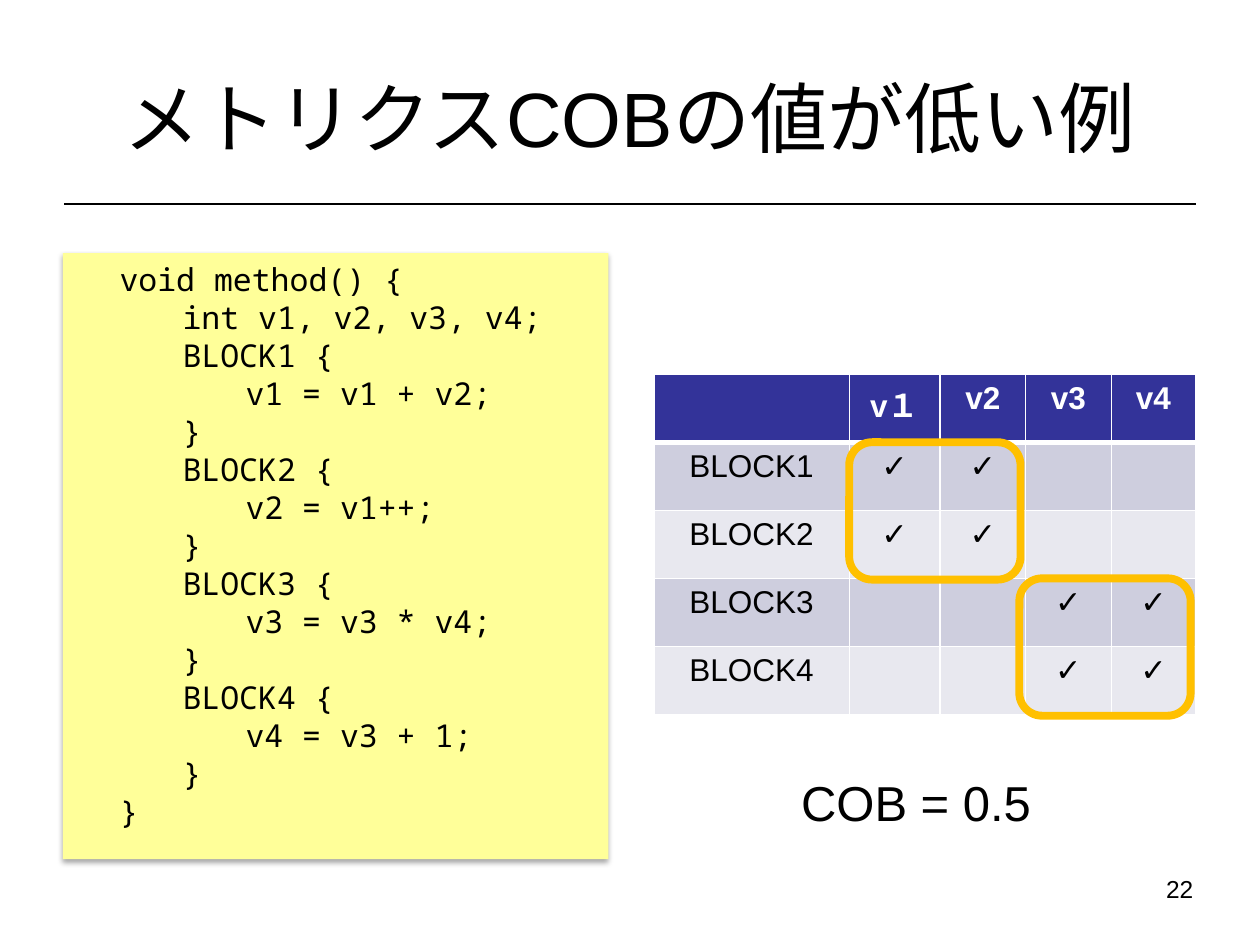
from lxml.etree import SubElement as Sub
from pptx import Presentation
from pptx.dml.color import RGBColor as RGB
from pptx.enum.shapes import MSO_CONNECTOR as Conn, MSO_SHAPE as Geo
from pptx.enum.text import MSO_ANCHOR as Anchor, PP_ALIGN as Align
from pptx.oxml.ns import qn
from pptx.util import Inches, Pt

COLORS = {"ink": "000000", "white": "FFFFFF", "note": "FFFF99", "head": "333399",
          "odd": "CECEDE", "even": "E8E8EF", "mark": "FFC000"}
TITLE = "メトリクスCOBの値が低い例"
# (indent level, line)
CODE = [
    (0, "void method() {"),
    (1, "int v1, v2, v3, v4;"),
    (1, "BLOCK1 {"), (2, "v1 = v1 + v2;"), (1, "}"),
    (1, "BLOCK2 {"), (2, "v2 = v1++;"), (1, "}"),
    (1, "BLOCK3 {"), (2, "v3 = v3 * v4;"), (1, "}"),
    (1, "BLOCK4 {"), (2, "v4 = v3 + 1;"), (1, "}"),
    (0, "}"),
]
USES = [
    ["", "v１", "v2", "v3", "v4"],
    ["BLOCK1", "✓", "✓", "", ""],
    ["BLOCK2", "✓", "✓", "", ""],
    ["BLOCK3", "", "", "✓", "✓"],
    ["BLOCK4", "", "", "✓", "✓"],
]
WIDTHS = [1.55, 0.72, 0.68, 0.68, 0.67]
ROW = 0.54
MARKS = [(6.74, 3.51), (8.09, 4.59)]
BODY = {"name": "Arial", "size": Pt(18), "bold": False}
MONO = {**BODY, "name": "Noto Sans Mono"}


def rgb(key):
    return RGB.from_string(COLORS[key])


def box(at):
    return [Inches(n) for n in at]


def style(para, form, color="ink", align=Align.LEFT):
    para.alignment = align
    for key, val in form.items():
        setattr(para.font, key, val)
    para.font.color.rgb = rgb(color)


def label(at, text, size, align=Align.LEFT, wrap=True):
    frame = slide.shapes.add_textbox(*box(at)).text_frame
    frame.word_wrap = wrap
    frame.text = text
    style(frame.paragraphs[0], {**BODY, "size": Pt(size)}, align=align)


def solid(node, key):
    fill = Sub(node, qn("a:solidFill"))
    return Sub(fill, qn("a:srgbClr"), val=COLORS[key])


def shade(shape):
    """Give the shape a soft shadow straight below it."""
    fx = Sub(shape._element.spPr, qn("a:effectLst"))
    cast = Sub(fx, qn("a:outerShdw"), blurRad=str(Pt(3.1)), dist=str(Pt(1.8)),
               dir="5400000", rotWithShape="0")
    tone = Sub(cast, qn("a:srgbClr"), val=COLORS["ink"])
    Sub(tone, qn("a:alpha"), val="35000")


def add_code():
    group = slide.shapes.add_group_shape()
    note = group.shapes.add_shape(Geo.RECTANGLE, *box((0.5, 2.01, 4.33, 4.81)))
    note.fill.solid()
    note.fill.fore_color.rgb = rgb("note")
    note.line.fill.background()
    shade(note)
    frame = group.shapes.add_textbox(*box((0.85, 2.01, 3.98, 4.64))).text_frame
    frame.word_wrap = True
    for i, (level, line) in enumerate(CODE):
        para = frame.add_paragraph() if i else frame.paragraphs[0]
        para.text = "\t" * level + line
        para.line_spacing = Pt(21.7)
        tabs = Sub(para._p.get_or_add_pPr(), qn("a:tabLst"))
        for stop in (0.5, 1):
            Sub(tabs, qn("a:tab"), pos=str(Inches(stop)), algn="l")
        style(para, MONO)


def add_uses():
    at = (5.19, 2.97, sum(WIDTHS), ROW * len(USES))
    table = slide.shapes.add_table(len(USES), len(WIDTHS), *box(at)).table
    for col, width in zip(table.columns, WIDTHS):
        col.width = Inches(width)
    for r, line in enumerate(USES):
        table.rows[r].height = Inches(ROW)
        back = "head" if r == 0 else "odd" if r % 2 else "even"
        edges = {"L": 1, "R": 1, "T": 3 if r == 1 else 1, "B": 1 if r else 3}
        for c, text in enumerate(line):
            cell = table.cell(r, c)
            props = cell._tc.get_or_add_tcPr()
            for side, width in edges.items():
                solid(Sub(props, qn("a:ln" + side), w=str(Pt(width))), "white")
            cell.fill.solid()
            cell.fill.fore_color.rgb = rgb(back)
            cell.text = text
            style(cell.text_frame.paragraphs[0], {**BODY, "bold": r == 0},
                  "ink" if r else "white", Align.CENTER)


def add_mark(left, top):
    mark = slide.shapes.add_shape(Geo.ROUNDED_RECTANGLE, *box((left, top, 1.36, 1.09)))
    mark.shadow.inherit = False
    mark.fill.background()
    mark.line.color.rgb = rgb("mark")
    mark.line.width = Pt(4.5)


deck = Presentation()
deck.slide_width, deck.slide_height = Inches(10), Inches(7.5)
slide = deck.slides.add_slide(deck.slide_layouts[5])

rule = slide.shapes.add_connector(Conn.STRAIGHT, *box((0.51, 1.62, 9.49, 1.62)))
rule.line.color.rgb = rgb("ink")
rule.line.width = Pt(0.75)
Sub(rule._element.spPr, qn("a:effectLst"))

title = slide.shapes.title
title.left, title.top, title.width, title.height = box((0.5, 0.3, 8.99, 1.25))
title.text_frame.text = TITLE
title.text_frame.vertical_anchor = Anchor.MIDDLE
style(title.text_frame.paragraphs[0], {**BODY, "size": Pt(44)}, align=Align.CENTER)

label((8.31, 6.89, 1.26, 0.32), "22", 14, Align.RIGHT)
add_code()
add_uses()
label((6.26, 6.08, 2.05, 0.57), "COB = 0.5", 28, wrap=False)
for spot in MARKS:
    add_mark(*spot)

deck.save("out.pptx")
